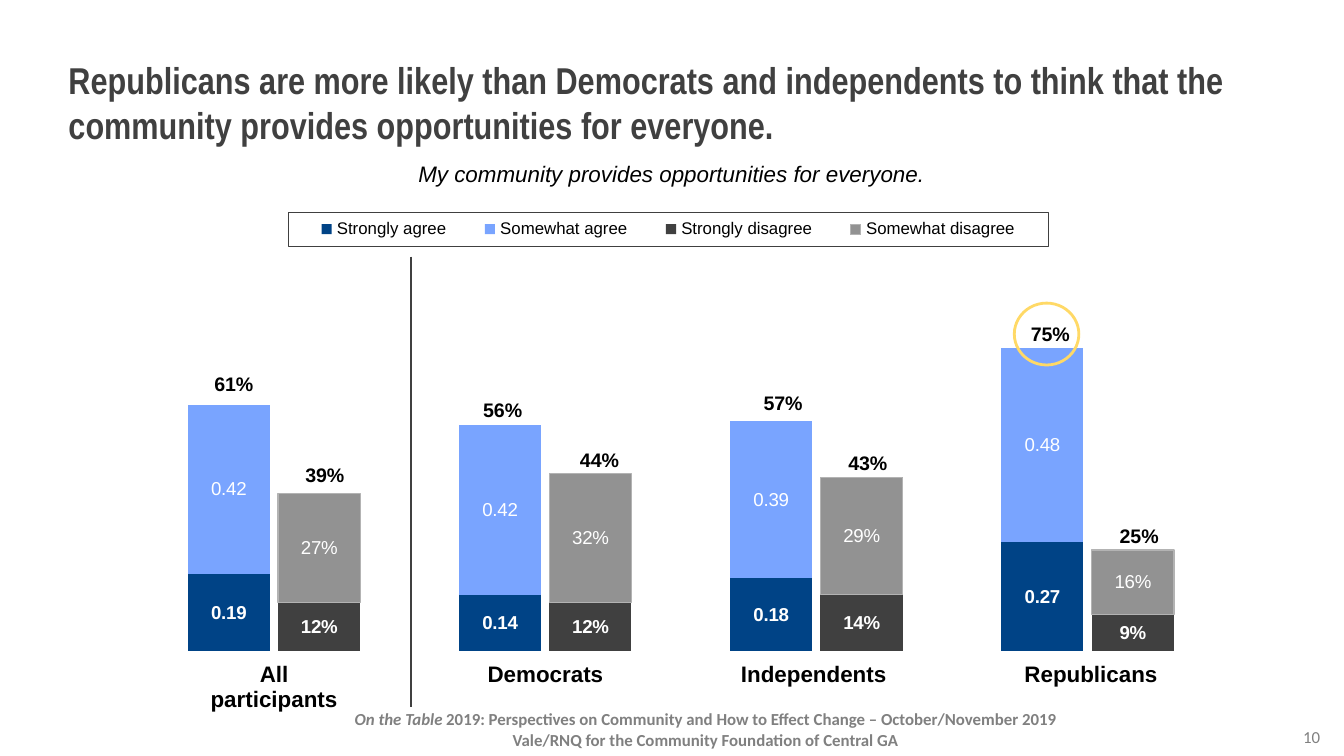
from lxml import etree
from pptx import Presentation
from pptx.chart.data import CategoryChartData
from pptx.dml.color import RGBColor
from pptx.enum import chart as charts, shapes, text
from pptx.oxml import parse_xml
from pptx.oxml.ns import nsdecls, qn
from pptx.util import Cm, Pt

WHITE, BLACK, DARK, GREY, YELLOW = "FFFFFF", "000000", "404040", "808080", "FFD966"
CENTER, RIGHT = text.PP_ALIGN.CENTER, text.PP_ALIGN.RIGHT

# name, values by group, column within the group, fill, bold labels, label format
SERIES = [
    ("Strongly agree", [0.19, 0.14, 0.18, 0.27], 0, "004386", True, "General"),
    ("Somewhat agree", [0.42, 0.42, 0.39, 0.48], 0, "79A4FF", False, "General"),
    ("Strongly disagree", [0.12, 0.12, 0.14, 0.09], 1, DARK, True, "0%"),
    ("Somewhat disagree", [0.27, 0.32, 0.29, 0.16], 1, "929292", False, "0%"),
]
# text, centre and top in cm from the chart's corner
TOTALS = [
    ("61%", 3.0, 3.28), ("39%", 4.72, 5.0),
    ("56%", 8.08, 3.76), ("44%", 9.91, 4.72),
    ("57%", 13.38, 3.63), ("43%", 14.98, 4.77),
    ("75%", 18.43, 2.34), ("25%", 20.11, 6.15),
]
GROUPS = [("All\vparticipants", 3.76), ("Democrats", 8.89),
          ("Independents", 13.96), ("Republicans", 19.2)]


def rgb(value):
    return RGBColor.from_string(value)


def style_font(font, size, color, name="Arial", bold=False, italic=False):
    font.size, font.name, font.bold, font.italic = Pt(size), name, bold, italic
    font.color.rgb = rgb(color)


def write(tf, content, size, color=BLACK, align=None, spacing=None, wrap=True, **fmt):
    """Fill a text frame; each line of content becomes a paragraph."""
    tf.word_wrap = wrap
    for i, line in enumerate(content.split("\n")):
        p = tf.paragraphs[0] if i == 0 else tf.add_paragraph()
        p.text = line
        p.alignment = align
        if spacing:
            p.line_spacing = Pt(spacing)
        for r in p.runs:
            style_font(r.font, size, color, **fmt)
    return tf


def add_text(s, box, content, size, **fmt):
    sp = s.shapes.add_textbox(*map(Cm, box))
    return write(sp.text_frame, content, size, **fmt)


def add_title(s, box, content):
    sp = s.shapes.title
    sp.left, sp.top, sp.width, sp.height = map(Cm, box)
    tf = write(sp.text_frame, content, 20, color=DARK, name="Arial Narrow",
               bold=True, align=text.PP_ALIGN.LEFT)
    tf.auto_size = text.MSO_AUTO_SIZE.NONE
    tf.vertical_anchor = text.MSO_ANCHOR.MIDDLE


def set_layout(parent, index, box, target=""):
    """Place a chart part by percentages of the chart's size."""
    for old in parent.findall(qn("c:layout")):
        parent.remove(old)
    modes = '<c:xMode val="edge"/><c:yMode val="edge"/>'
    sizes = "".join(f'<c:{tag} val="{percent / 100}"/>'
                    for tag, percent in zip("xywh", box))
    parent.insert(index, parse_xml(
        f'<c:layout {nsdecls("c")}><c:manualLayout>{target}{modes}{sizes}'
        '</c:manualLayout></c:layout>'))


def format_legend(chart):
    chart.has_legend = True
    legend = chart.legend
    legend.position = charts.XL_LEGEND_POSITION.TOP
    legend.include_in_layout = False
    style_font(legend.font, 9, BLACK)
    element = legend._element
    set_layout(element, 1, (17.7, 3.9, 63, 6.7))
    element.find(qn("c:overlay")).addnext(parse_xml(
        f'<c:spPr {nsdecls("c", "a")}><a:ln w="3175"><a:solidFill>'
        f'<a:srgbClr val="{DARK}"/></a:solidFill></a:ln></c:spPr>'))


def add_opinion_chart(s, box):
    data = CategoryChartData()
    data.categories = [str(n) for n in range(1, 12)]
    for name, values, column, *_ in SERIES:
        cells = [None] * 11
        cells[column::3] = values
        data.add_series(name, cells)
    chart = s.shapes.add_chart(charts.XL_CHART_TYPE.COLUMN_STACKED,
                               *map(Cm, box), data).chart
    chart.has_title = False
    style_font(chart.font, 18, BLACK)
    format_legend(chart)
    chart.category_axis.visible = chart.value_axis.visible = False
    chart.value_axis.has_major_gridlines = False
    chart.value_axis.minimum_scale, chart.value_axis.maximum_scale = 0, 1

    plot = chart.plots[0]
    plot.gap_width, plot.overlap, plot.vary_by_categories = 10, 100, False
    set_layout(plot._element.getparent(), 0, (9, 10.8, 82.5, 78.7),
               '<c:layoutTarget val="inner"/>')
    for series, (_, _, _, color, bold, number_format) in zip(plot.series, SERIES):
        series.format.fill.solid()
        series.format.fill.fore_color.rgb = rgb(color)
        labels = series.data_labels
        labels.show_value = True
        labels.number_format, labels.number_format_is_linked = number_format, False
        style_font(labels.font, 10, WHITE, bold=bold)
    outline = plot.series[-1].format.line
    outline.color.rgb, outline.width = rgb("B3B3B3"), Pt(0.75)


def add_divider(s, x, top, bottom):
    line = s.shapes.add_connector(shapes.MSO_CONNECTOR.STRAIGHT,
                                  Cm(x), Cm(top), Cm(x), Cm(bottom))
    line.line.color.rgb, line.line.width = rgb(DARK), Pt(0.75)
    etree.SubElement(line._element.spPr, qn("a:effectLst"))


def add_highlight(s, box):
    sp = s.shapes.add_shape(shapes.MSO_SHAPE.OVAL, *map(Cm, box))
    sp.shadow.inherit = False
    sp.fill.background()
    sp.line.color.rgb, sp.line.width = rgb(YELLOW), Pt(1.5)


def add_results(s, box):
    """Chart with its totals, group names, divider and highlight."""
    left, top, _, _ = box
    add_opinion_chart(s, box)
    for label, center, y in TOTALS:
        add_text(s, (left + center - 0.64, top + y, 1.28, 0.72), label, 10.5,
                 bold=True, align=CENTER, wrap=False)
    for label, center in GROUPS:
        add_text(s, (left + center - 1.9, top + 8.78, 3.8, 0.72), label, 12,
                 bold=True, align=CENTER, spacing=13, wrap=False)
    add_divider(s, left + 6.35, top + 1.22, top + 9.73)
    add_highlight(s, (left + 17.75, top + 2.1, 1.22, 1.17))


def add_footer(s, box):
    tf = add_text(s, box, "On the Table"
                  "\nVale/RNQ for the Community Foundation of Central GA",
                  9, color=GREY, name="Calibri", bold=True, align=CENTER, wrap=False)
    p = tf.paragraphs[0]
    p.runs[0].font.italic = True
    r = p.add_run()
    r.text = (" 2019: Perspectives on Community and How to Effect Change"
              " – October/November 2019")
    style_font(r.font, 9, GREY, "Calibri", bold=True)


def main():
    prs = Presentation()
    prs.slide_width, prs.slide_height = Cm(25.4), Cm(14.29)
    s = prs.slides.add_slide(prs.slide_layouts[5])
    add_footer(s, (6.27, 13.28, 14.12, 1.02))
    add_title(s, (1.04, 0.76, 22.78, 2.34),
              "Republicans are more likely than Democrats and independents to think "
              "that the community provides opportunities for everyone.")
    add_results(s, (1.42, 3.63, 22.78, 9.7))
    add_text(s, (1.57, 2.92, 22.25, 0.76),
             "My community provides opportunities for everyone.", 12,
             italic=True, align=CENTER, spacing=14)
    add_text(s, (23.57, 13.61, 1.63, 0.64), "10", 9, color=GREY,
             name="Calibri", align=RIGHT)
    prs.save("out.pptx")


if __name__ == "__main__":
    main()
